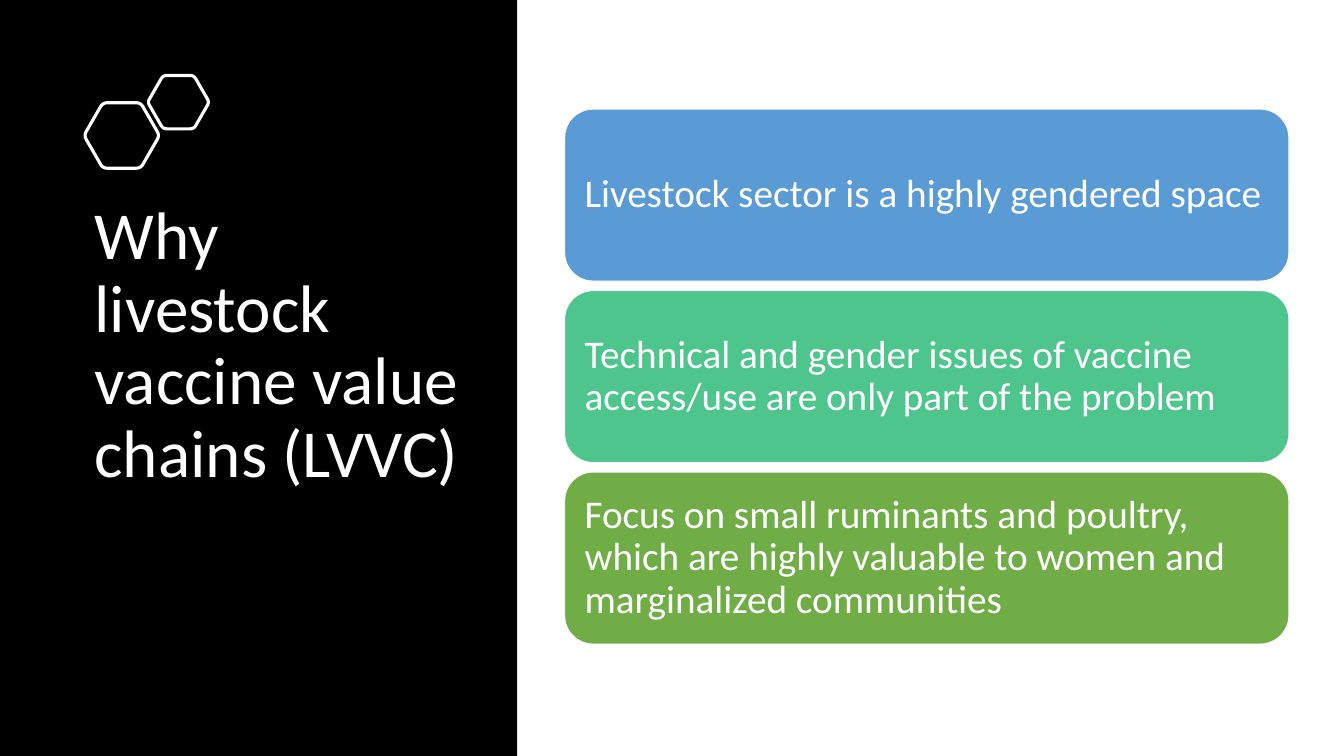
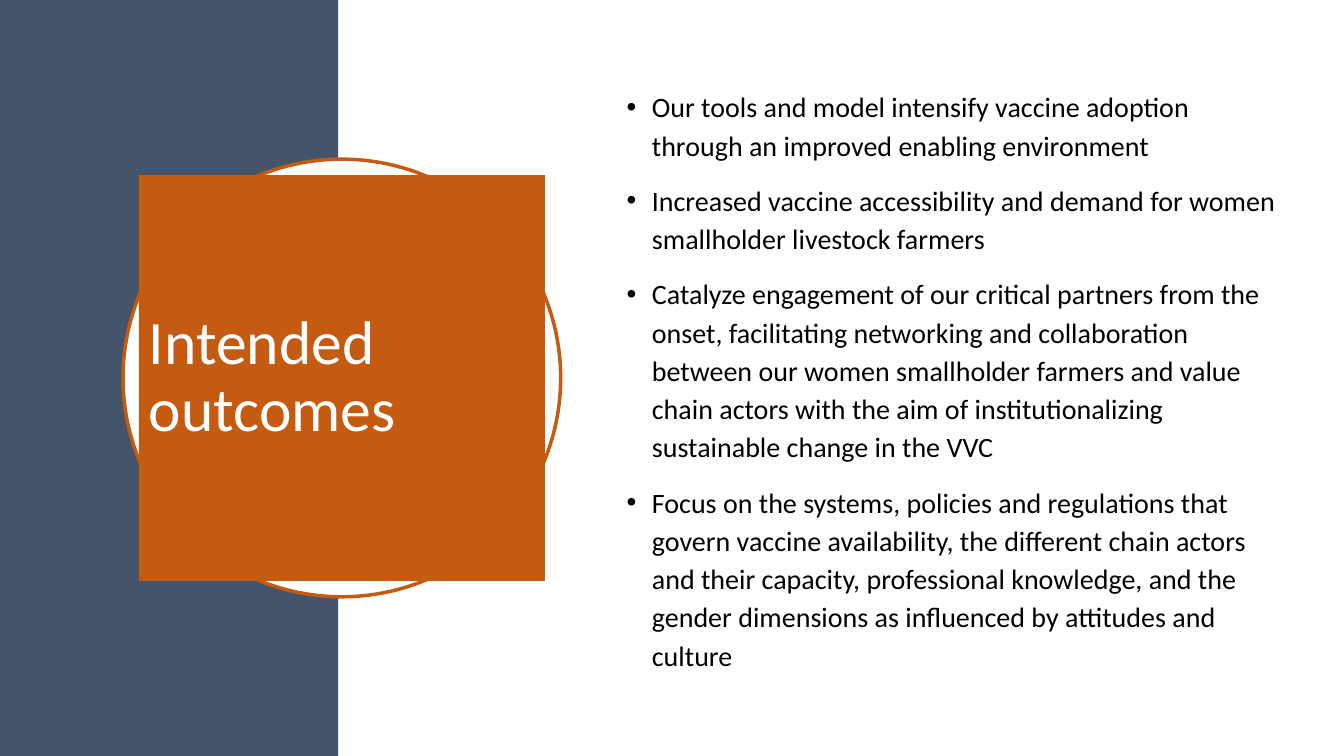
"""Build two slides on livestock vaccine value chains."""
import math

from lxml import etree
from pptx import Presentation
from pptx.dml.color import RGBColor
from pptx.enum import shapes, text
from pptx.oxml import ns
from pptx.util import Pt

FONT = "Calibri"
WHITE = RGBColor(0xFF, 0xFF, 0xFF)
BLACK = RGBColor(0, 0, 0)
SLATE = RGBColor(0x44, 0x54, 0x6A)
ORANGE = RGBColor(0xC5, 0x5A, 0x11)
BLUE = RGBColor(0x5B, 0x9B, 0xD5)
TEAL = RGBColor(0x4D, 0xC5, 0x8D)
GREEN = RGBColor(0x70, 0xAD, 0x47)
WIDTH, HEIGHT = 960, 540

REASONS = [
    ("Livestock sector is a highly gendered space", BLUE),
    ("Technical and gender issues of vaccine access/use are only part of the problem", TEAL),
    ("Focus on small ruminants and poultry, which are highly valuable to women and "
     "marginalized communities", GREEN),
]
OUTCOMES = [
    "Our tools and model intensify vaccine adoption through an improved enabling environment",
    "Increased vaccine accessibility and demand for women smallholder livestock farmers",
    "Catalyze engagement of our critical partners from the onset, facilitating networking and "
    "collaboration between our women smallholder farmers and value chain actors with the aim of "
    "institutionalizing sustainable change in the VVC",
    "Focus on the systems, policies and regulations that govern vaccine availability, the "
    "different chain actors and their capacity, professional knowledge, and the gender "
    "dimensions as influenced by attitudes and culture",
]


def paint(sp, fill=None, line=None, weight=1):
    """Set fill and outline of a shape and remove its shadow."""
    sp.shadow.inherit = False
    if fill is None:
        sp.fill.background()
    else:
        sp.fill.solid()
        sp.fill.fore_color.rgb = fill
    if line is None:
        sp.line.fill.background()
    else:
        sp.line.color.rgb = line
        sp.line.width = Pt(weight)


def add_block(s, kind, box, fill, line=None, weight=1):
    """Add a preset shape in a box given in points."""
    sp = s.shapes.add_shape(kind, *map(Pt, box))
    paint(sp, fill, line, weight)
    return sp


def add_band(s, width, fill):
    """Add the full-height colour band at the left edge."""
    add_block(s, shapes.MSO_SHAPE.RECTANGLE, (0, 0, width, HEIGHT), fill)


def write(sp, lines, size, color=WHITE, spacing=0.9, inset=7.2, middle=True):
    """Write left-aligned paragraphs into a shape and return them."""
    tf = sp.text_frame
    tf.word_wrap = True
    tf.margin_left = tf.margin_right = Pt(inset)
    tf.vertical_anchor = text.MSO_ANCHOR.MIDDLE if middle else text.MSO_ANCHOR.TOP
    for i, line in enumerate(lines):
        p = tf.add_paragraph() if i else tf.paragraphs[0]
        p.alignment = text.PP_ALIGN.LEFT
        p.line_spacing = spacing
        r = p.add_run()
        r.text = line
        r.font.name = FONT
        r.font.size = Pt(size)
        r.font.color.rgb = color
    return tf.paragraphs


def add_hexagon(s, cx, cy, radius):
    """Outline a regular hexagon with rounded corners."""
    trim, steps = 0.12, 6
    corners = [(cx + radius * math.cos(k * math.pi / 3), cy + radius * math.sin(k * math.pi / 3))
               for k in range(6)]
    points = []
    for k, corner in enumerate(corners):
        before, after = corners[k - 1], corners[(k + 1) % 6]
        for t in (i / steps for i in range(steps + 1)):
            pull_back, pull_on = trim * (1 - t) ** 2, trim * t ** 2
            points.append(tuple(Pt(c + pull_back * (b - c) + pull_on * (a - c))
                                for b, c, a in zip(before, corner, after)))
    builder = s.shapes.build_freeform(*points[0])
    builder.add_line_segments(points[1:], close=True)
    paint(builder.convert_to_shape(), line=WHITE, weight=2.25)


def add_cards(s, box, cards, gap):
    """Stack equally high rounded cards in a box."""
    left, top, width, height = box
    card_h = (height - gap * (len(cards) - 1)) / len(cards)
    for i, (line, fill) in enumerate(cards):
        card = (left, top + i * (card_h + gap), width, card_h)
        sp = add_block(s, shapes.MSO_SHAPE.ROUNDED_RECTANGLE, card, fill, WHITE)
        write(sp, [line], 28, inset=8.4)


def add_badge(s, box, title, overhang):
    """Place a title square in front of a ring centred on it."""
    left, top, side = box
    ring = (left - overhang, top - overhang, side + 2 * overhang, side + 2 * overhang)
    add_block(s, shapes.MSO_SHAPE.OVAL, ring, WHITE, ORANGE, 2.5)
    sp = add_block(s, shapes.MSO_SHAPE.RECTANGLE, (left, top, side, side), ORANGE)
    write(sp, [title], 44)


def add_bullets(s, box, lines):
    """Add a vertically centred bullet list."""
    sp = s.shapes.add_textbox(*map(Pt, box))
    for p in write(sp, lines, 20, BLACK, 1.14):
        p.space_before = p.space_after = Pt(6)
        props = p._p.get_or_add_pPr()
        props.set("marL", str(Pt(18)))
        props.set("indent", str(-Pt(18)))
        etree.SubElement(props, ns.qn("a:buFont")).set("typeface", "Arial")
        etree.SubElement(props, ns.qn("a:buChar")).set("char", "•")


def reasons_slide(s):
    """Build the slide on why value chains matter."""
    add_band(s, 369.4, BLACK)
    title = s.shapes.add_textbox(Pt(60.5), Pt(140.4), Pt(278), Pt(282))
    write(title, ["Why livestock vaccine value chains (LVVC)"], 48, middle=False)
    add_hexagon(s, 87, 96.8, 27)
    add_hexagon(s, 127.5, 73, 22)
    add_cards(s, (403.2, 77.8, 517.6, 382.4), REASONS, 6.5)


def outcomes_slide(s):
    """Build the slide on intended outcomes."""
    add_band(s, 241.6, SLATE)
    add_badge(s, (99.2, 125, 290), "Intended outcomes", 11.3)
    add_bullets(s, (440.6, 47.5, 479.5, 445.7), OUTCOMES)


def main():
    """Create and save the presentation."""
    prs = Presentation()
    prs.slide_width, prs.slide_height = Pt(WIDTH), Pt(HEIGHT)
    for build in (reasons_slide, outcomes_slide):
        build(prs.slides.add_slide(prs.slide_layouts[6]))
    prs.save("out.pptx")


if __name__ == "__main__":
    main()
